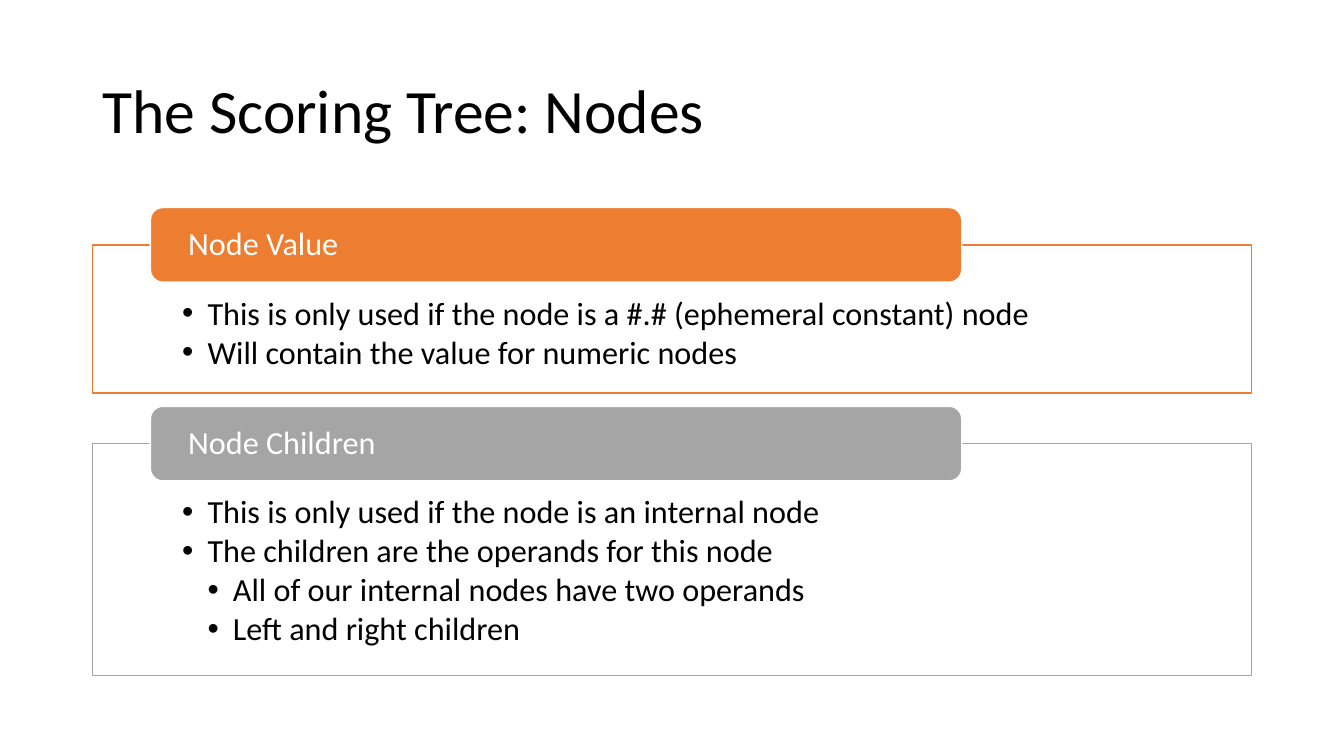
from dataclasses import dataclass

from lxml import etree
from pptx import Presentation
from pptx import util as u
from pptx.dml.color import RGBColor
from pptx.enum import shapes, text
from pptx.oxml.ns import qn

COLOURS = {
    "white": "FFFFFF",
    "black": "000000",
    "orange": "ED7D31",
    "grey": "A5A5A5",
}
FONT = "Calibri"
LEFT, WIDTH = 2.33, 29.21
FIRST_TOP, PANEL_GAP = 6.17, 1.28
HEADER_INDENT, HEADER_HEIGHT = 1.46, 1.88
HEADER_WIDTH = 0.7 * WIDTH
BULLET_INDENT = 0.64


@dataclass(frozen=True)
class Bullet:
    words: str
    level: int = 1


@dataclass(frozen=True)
class Section:
    heading: str
    colour: str
    height: float
    bullets: tuple[Bullet, ...]


SECTIONS = (
    Section("Node Value", "orange", 3.73, (
        Bullet("This is only used if the node is a #.# (ephemeral constant) node"),
        Bullet("Will contain the value for numeric nodes"),
    )),
    Section("Node Children", "grey", 5.84, (
        Bullet("This is only used if the node is an internal node"),
        Bullet("The children are the operands for this node"),
        Bullet("All of our internal nodes have two operands", 2),
        Bullet("Left and right children", 2),
    )),
)


def rgb(name: str) -> RGBColor:
    return RGBColor.from_string(COLOURS[name])


def place(box, left: float, top: float, width: float, height: float) -> None:
    box.left, box.top = u.Cm(left), u.Cm(top)
    box.width, box.height = u.Cm(width), u.Cm(height)


def paint(box, fill: str, line: str) -> None:
    box.fill.solid()
    box.fill.fore_color.rgb = rgb(fill)
    box.line.color.rgb = rgb(line)
    box.line.width = u.Pt(1)


def set_frame(box, anchor, side: float, top: float = 0, bottom: float = 0) -> None:
    frame = box.text_frame
    frame.word_wrap = True
    frame.auto_size = text.MSO_AUTO_SIZE.NONE
    frame.vertical_anchor = anchor
    frame.margin_left = frame.margin_right = u.Cm(side)
    frame.margin_top, frame.margin_bottom = u.Cm(top), u.Cm(bottom)


def write(para, words: str, *, size: float = 23, colour: str = "black",
          after: float = 0, level: int = 0) -> None:
    """Fill a paragraph; a level above zero makes it a bullet."""
    para.alignment = text.PP_ALIGN.LEFT
    para.line_spacing = 0.9
    para.space_before, para.space_after = u.Pt(0), u.Pt(after)
    span = para.add_run()
    span.text = words
    span.font.name, span.font.size = FONT, u.Pt(size)
    span.font.color.rgb = rgb(colour)
    if level:
        para.level = level
        props = para._p.get_or_add_pPr()
        props.set("marL", str(u.Cm(BULLET_INDENT * level)))
        props.set("indent", str(-u.Cm(BULLET_INDENT)))
        etree.SubElement(props, qn("a:buFont")).set("typeface", "Arial")
        etree.SubElement(props, qn("a:buChar")).set("char", "•")


def draw_section(page, body, section: Section, top: float) -> None:
    # Framed list
    place(body, LEFT, top, WIDTH, section.height)
    paint(body, "white", section.colour)
    fill_colour = body.fill._xPr.find(qn("a:solidFill"))[0]
    etree.SubElement(fill_colour, qn("a:alpha")).set("val", "90000")
    set_frame(body, text.MSO_ANCHOR.TOP, 2.26, 1.32, 0.46)
    frame = body.text_frame
    for index, bullet in enumerate(section.bullets):
        para = frame.add_paragraph() if index else frame.paragraphs[0]
        write(para, bullet.words, after=3, level=bullet.level)

    # Heading across the frame's top edge
    header = page.shapes.add_shape(
        shapes.MSO_SHAPE.ROUNDED_RECTANGLE,
        u.Cm(LEFT + HEADER_INDENT), u.Cm(top - HEADER_HEIGHT / 2),
        u.Cm(HEADER_WIDTH), u.Cm(HEADER_HEIGHT))
    header.shadow.inherit = False
    paint(header, section.colour, "white")
    set_frame(header, text.MSO_ANCHOR.MIDDLE, 0.86)
    write(header.text_frame.paragraphs[0], section.heading, colour="white")


def main() -> None:
    deck = Presentation()
    deck.slide_width, deck.slide_height = u.Cm(33.87), u.Cm(19.05)
    page = deck.slides.add_slide(deck.slide_layouts.get_by_name("Two Content"))

    # Title
    title, *bodies = page.placeholders
    place(title, LEFT, 1.02, WIDTH, 3.68)
    set_frame(title, text.MSO_ANCHOR.MIDDLE, 0.25, 0.13, 0.13)
    write(title.text_frame.paragraphs[0], "The Scoring Tree: Nodes", size=44)

    # Sections, stacked with an equal gap
    top = FIRST_TOP
    for body, section in zip(bodies, SECTIONS):
        draw_section(page, body, section, top)
        top += section.height + PANEL_GAP

    deck.save("out.pptx")


if __name__ == "__main__":
    main()
